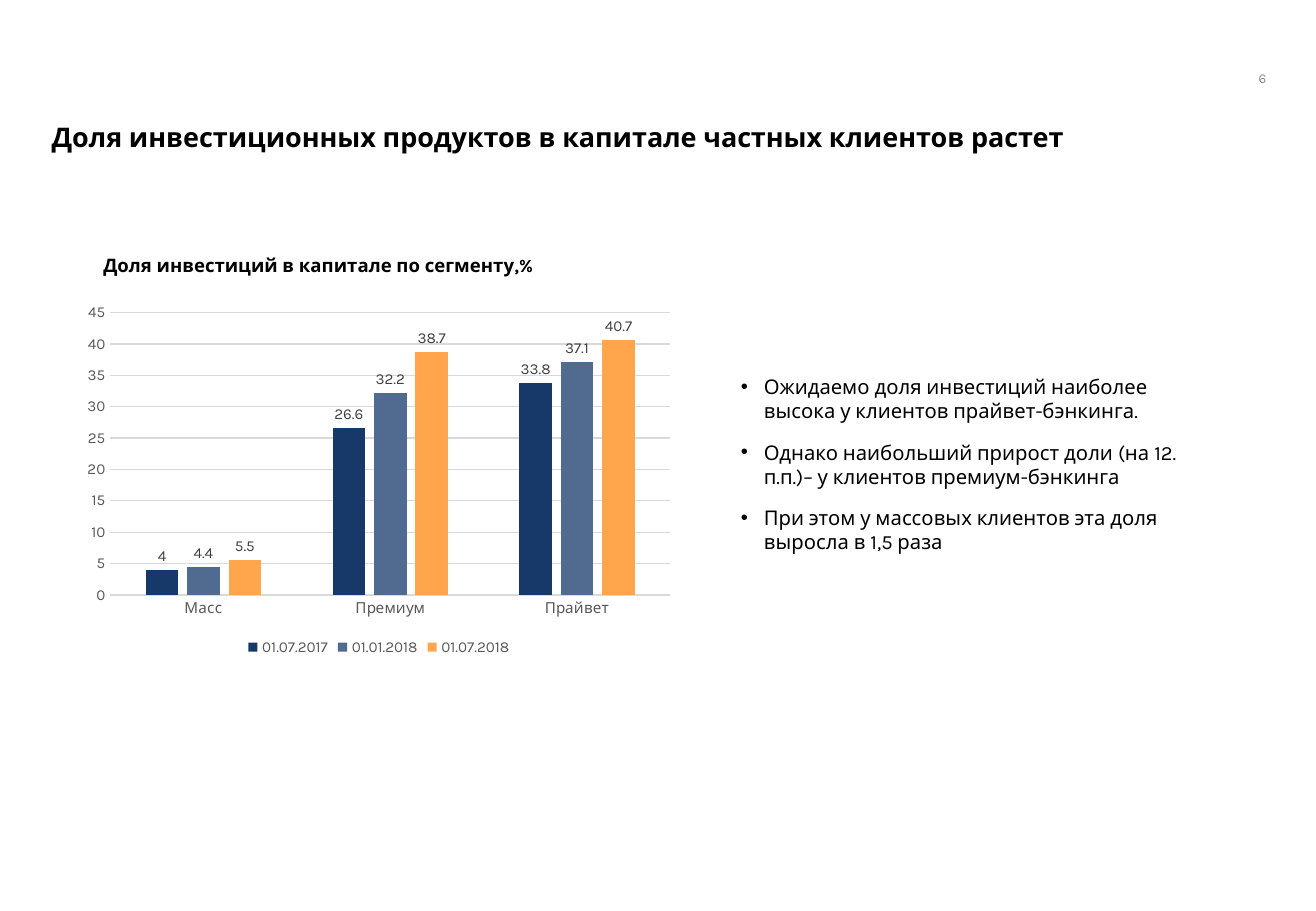
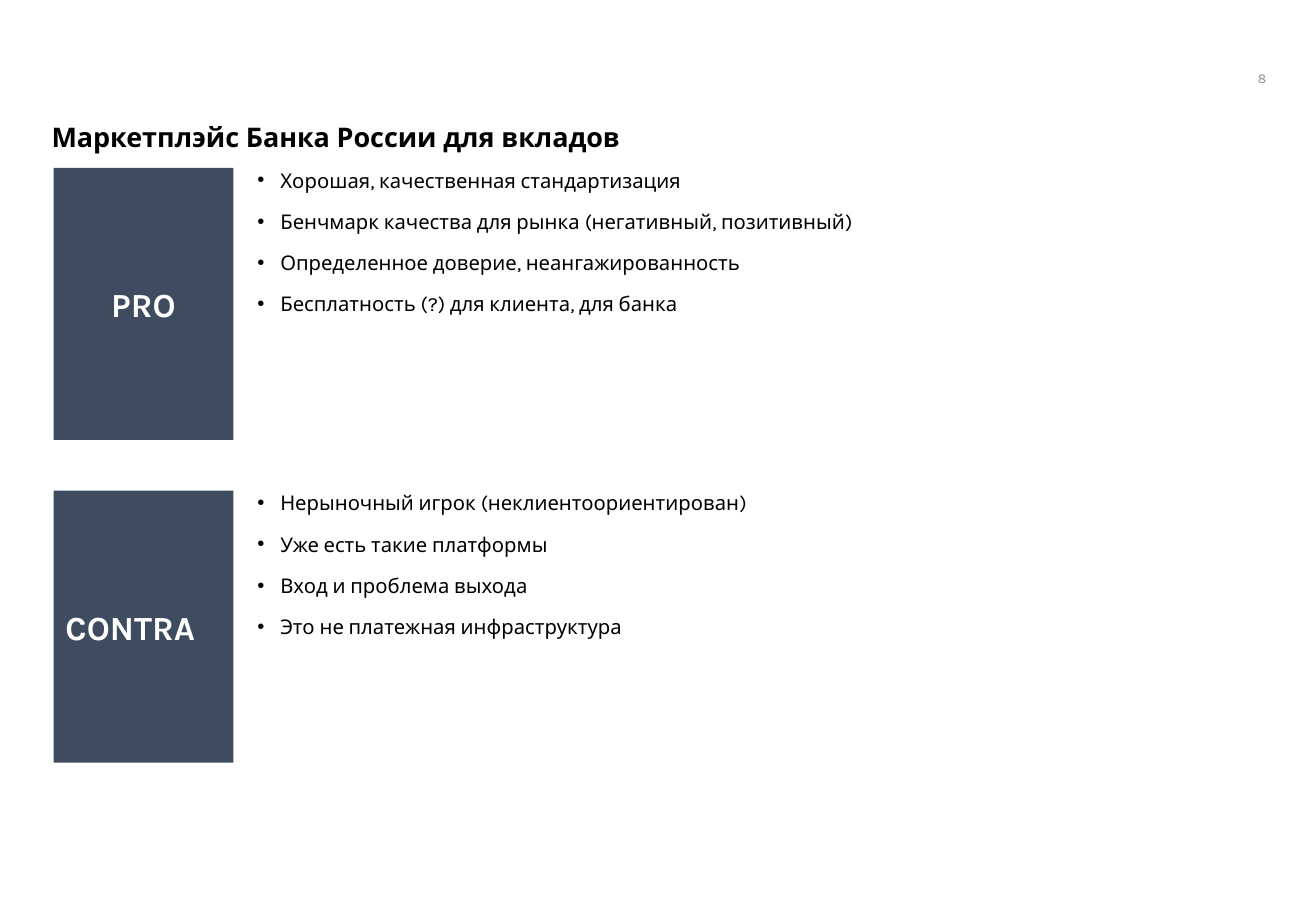
from dataclasses import dataclass

from lxml import etree
from pptx import Presentation
from pptx.chart.data import CategoryChartData
from pptx.dml.color import RGBColor
from pptx.enum.chart import XL_CHART_TYPE, XL_LABEL_POSITION, XL_LEGEND_POSITION, XL_TICK_MARK
from pptx.enum.shapes import MSO_SHAPE
from pptx.enum.text import MSO_ANCHOR, PP_ALIGN
from pptx.oxml.ns import qn
from pptx.util import Cm, Pt

COLUMNS = XL_CHART_TYPE.COLUMN_CLUSTERED
OUTSIDE_END = XL_LABEL_POSITION.OUTSIDE_END
BOTTOM = XL_LEGEND_POSITION.BOTTOM
NO_TICK = XL_TICK_MARK.NONE
HOME_PLATE = MSO_SHAPE.PENTAGON
TOP, MIDDLE = MSO_ANCHOR.TOP, MSO_ANCHOR.MIDDLE
LEFT, CENTER, RIGHT = PP_ALIGN.LEFT, PP_ALIGN.CENTER, PP_ALIGN.RIGHT


@dataclass(frozen=True)
class Theme:
    face: str = "Karla"
    ink: str = "000000"
    muted: str = "8C8C8C"
    axis: str = "595959"
    value: str = "404040"
    grid: str = "D9D9D9"
    tile: str = "3F4C60"
    on_tile: str = "FFFFFF"
    series: tuple = ("163969", "506B8F", "FFA64C")
    number_size: float = 8
    chart_size: float = 9
    caption_size: float = 11
    body_size: float = 12
    title_size: float = 16
    tile_size: float = 20


def apply(target, values):
    for name, value in values.items():
        setattr(target, name, value)


class Deck:
    def __init__(self, theme):
        self.theme = theme
        self.prs = Presentation()
        apply(self.prs, {"slide_width": Cm(27.51), "slide_height": Cm(19.05)})
        self.slide = None

    def style(self, font, size, color, bold=False):
        apply(font, {"name": self.theme.face, "size": Pt(size), "bold": bold})
        font.color.rgb = RGBColor.from_string(color)

    def new_slide(self, title, number):
        """Start a slide with the shared title and page number."""
        t = self.theme
        self.slide = self.prs.slides.add_slide(self.prs.slide_layouts[6])
        self.text((25.12, 1.42, 1.35, 0.41), [number], t.number_size, t.muted,
                  anchor=MIDDLE, align=RIGHT)
        self.text((1.08, 2.46, 25.32, 0.86), [title], t.title_size, t.ink,
                  bold=True, line_spacing=0.9)

    def text(self, box, lines, size, color, bold=False, anchor=TOP, align=LEFT,
             line_spacing=None, inset=0.13, bullets=False):
        frame = self.slide.shapes.add_textbox(*map(Cm, box)).text_frame
        apply(frame, {"word_wrap": True, "vertical_anchor": anchor,
                      "margin_left": 0, "margin_right": 0,
                      "margin_top": Cm(inset), "margin_bottom": Cm(inset)})
        for index, line in enumerate(lines):
            paragraph = frame.add_paragraph() if index else frame.paragraphs[0]
            if bullets:
                self.bullet(paragraph)
            apply(paragraph, {"alignment": align, "line_spacing": line_spacing,
                              "space_before": Pt(10 if index else 0)})
            run = paragraph.add_run()
            run.text = line
            self.style(run.font, size, color, bold)

    def bullet(self, paragraph):
        props = paragraph._p.get_or_add_pPr()
        indent = Cm(0.48)
        props.set("marL", str(indent))
        props.set("indent", str(-indent))
        etree.SubElement(props, qn("a:buFont")).set("typeface", "Arial")
        etree.SubElement(props, qn("a:buChar")).set("char", "•")

    def bullets(self, box, lines, inset=0.13):
        self.text(box, lines, self.theme.body_size, self.theme.ink,
                  inset=inset, bullets=True)

    def tile(self, box, label, align):
        t = self.theme
        tile = self.slide.shapes.add_shape(HOME_PLATE, *map(Cm, box))
        tile.adjustments[0] = 0
        tile.shadow.inherit = False
        tile.fill.solid()
        tile.fill.fore_color.rgb = RGBColor.from_string(t.tile)
        tile.line.fill.background()
        apply(tile.text_frame, {"word_wrap": True, "vertical_anchor": MIDDLE})
        paragraph = tile.text_frame.paragraphs[0]
        paragraph.alignment = align
        run = paragraph.add_run()
        run.text = label
        self.style(run.font, t.tile_size, t.on_tile, bold=True)

    def column_chart(self, box, categories, series):
        t = self.theme
        data = CategoryChartData()
        data.categories = categories
        for name, values in series.items():
            data.add_series(name, values)
        chart = self.slide.shapes.add_chart(COLUMNS, *map(Cm, box), data).chart
        apply(chart, {"has_title": False, "has_legend": True})
        self.style(chart.font, t.chart_size, t.axis)
        apply(chart.legend, {"position": BOTTOM, "include_in_layout": False})
        self.style(chart.legend.font, t.chart_size, t.axis)

        # Axes and grid
        shares = chart.value_axis
        for axis in (chart.category_axis, shares):
            apply(axis, {"major_tick_mark": NO_TICK, "minor_tick_mark": NO_TICK})
            self.style(axis.tick_labels.font, t.chart_size, t.axis)
        apply(shares, {"minimum_scale": 0, "maximum_scale": 45, "major_unit": 5})
        apply(shares.tick_labels, {"number_format": "0",
                                   "number_format_is_linked": False})
        shares.format.line.fill.background()
        for line in (chart.category_axis.format.line,
                     shares.major_gridlines.format.line):
            line.width = Pt(0.75)
            line.color.rgb = RGBColor.from_string(t.grid)

        # Columns and their values
        plot = chart.plots[0]
        apply(plot, {"gap_width": 219, "overlap": -27, "vary_by_categories": False})
        for columns, color in zip(plot.series, t.series):
            columns.format.fill.solid()
            columns.format.fill.fore_color.rgb = RGBColor.from_string(color)
            labels = columns.data_labels
            apply(labels, {"show_value": True, "position": OUTSIDE_END})
            self.style(labels.font, t.chart_size, t.value)


def main():
    theme = Theme()
    deck = Deck(theme)

    # Share of investments by client segment
    deck.new_slide("Доля инвестиционных продуктов в капитале частных клиентов растет", "6")
    deck.bullets((15.49, 7.7, 10.08, 4.04), [
        "Ожидаемо доля инвестиций наиболее высока у клиентов прайвет-бэнкинга.",
        "Однако наибольший прирост доли (на 12. п.п.)– у клиентов премиум-бэнкинга",
        "При этом у массовых клиентов эта доля выросла в 1,5 раза",
    ])
    deck.text((2.16, 5.18, 10.41, 0.74), ["Доля инвестиций в капитале по сегменту,%"],
              theme.caption_size, theme.ink, bold=True)
    deck.column_chart((1.57, 6.2, 12.7, 7.62), ["Масс", "Премиум", "Прайвет"], {
        "01.07.2017": (4, 26.6, 33.8),
        "01.01.2018": (4.4, 32.2, 37.1),
        "01.07.2018": (5.5, 38.7, 40.7),
    })

    # Arguments for and against the marketplace
    deck.new_slide("Маркетплэйс Банка России для вкладов", "8")
    sides = [
        ("PRO", CENTER, [
            "Хорошая, качественная стандартизация",
            "Бенчмарк качества для рынка (негативный, позитивный)",
            "Определенное доверие, неангажированность",
            "Бесплатность (?) для клиента, для банка",
        ]),
        ("CONTRA", LEFT, [
            "Нерыночный игрок (неклиентоориентирован)",
            "Уже есть такие платформы",
            "Вход и проблема выхода",
            "Это не платежная инфраструктура",
        ]),
    ]
    first_top, row_step = 3.51, 6.75
    for row, (label, align, arguments) in enumerate(sides):
        top = first_top + row * row_step
        deck.bullets((5.38, top, 21.03, 3.12), arguments, inset=0)
        deck.tile((1.12, top, 3.76, 5.69), label, align)

    deck.prs.save("out.pptx")


if __name__ == "__main__":
    main()
